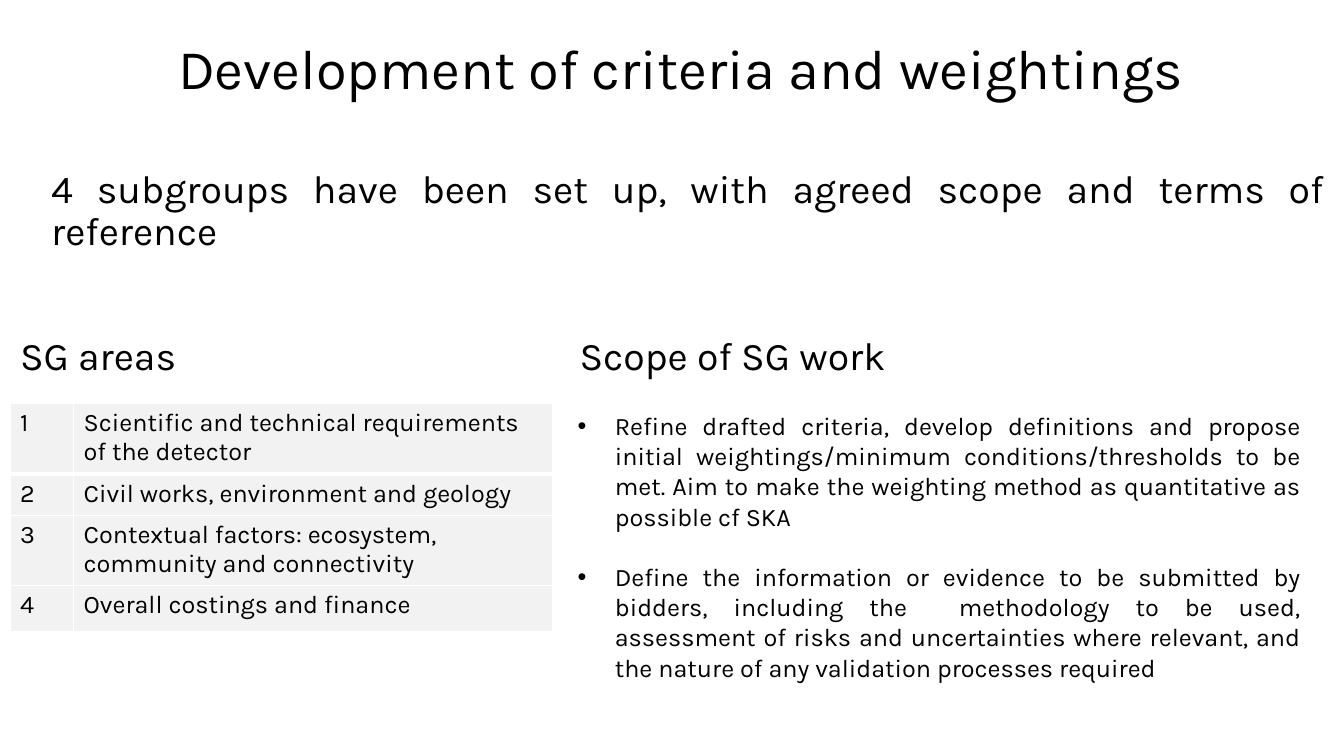
"""Build the slide on criteria and weightings."""
from lxml import etree
from pptx import Presentation
from pptx.dml.color import RGBColor
from pptx.enum.text import MSO_ANCHOR, PP_ALIGN
from pptx.oxml.ns import qn
from pptx.util import Inches, Pt

LEFT, MID, JUST = PP_ALIGN.LEFT, PP_ALIGN.CENTER, PP_ALIGN.JUSTIFY
CENTRE = MSO_ANCHOR.MIDDLE
FONT, INK, PALE, WHITE = "Karla", "000000", "F2F2F2", "FFFFFF"

TITLE = "Development of criteria and weightings"
INTRO = "4 subgroups have been set up, with agreed scope and terms of reference"
HEADS = [("SG areas", 0.1, 5.38), ("Scope of SG work", 5.65, 7.37)]
AREAS = [
    ("Scientific and technical requirements of the detector", 0.69),
    ("Civil works, environment and geology", 0.41),
    ("Contextual factors: ecosystem, community and connectivity", 0.7),
    ("Overall costings and finance", 0.46),
]
WIDTHS = [0.63, 4.75]
SCOPE = [
    "Refine drafted criteria, develop definitions and propose initial "
    "weightings/minimum conditions/thresholds to be met. Aim to make the "
    "weighting method as quantitative as possible cf SKA",
    "Define the information or evidence to be submitted by bidders, including "
    "the  methodology to be used, assessment of risks and uncertainties where "
    "relevant, and the nature of any validation processes required",
]


def hue(code):
    return RGBColor.from_string(code)


def style(para, size, align=LEFT):
    para.alignment = align
    font = para.font
    font.name, font.size, font.bold = FONT, Pt(size), False
    font.color.rgb = hue(INK)


def add_box(slide, texts, at, size, align=LEFT):
    box = slide.shapes.add_textbox(*map(Inches, at))
    frame = box.text_frame
    frame.word_wrap = True
    frame.text = "\n".join(texts)
    for para in frame.paragraphs:
        style(para, size, align)
    return frame


def add_dot(para):
    props = para._p.get_or_add_pPr()
    props.set("marL", str(Inches(0.37)))
    props.set("indent", str(-Inches(0.37)))
    face = etree.Element(qn("a:buFont"), typeface="Arial")
    dot = etree.Element(qn("a:buChar"), char="•")
    spot = 1 if props.find(qn("a:spcBef")) is not None else 0
    props[spot:spot] = [face, dot]


def edge(cell, low):
    props = cell._tc.get_or_add_tcPr()
    sides = [("lnL", 1), ("lnR", 1), ("lnT", 1), ("lnB", low)]
    for spot, (side, width) in enumerate(sides):
        line = etree.Element(qn("a:" + side), w=str(Pt(width)))
        fill = etree.SubElement(line, qn("a:solidFill"))
        etree.SubElement(fill, qn("a:srgbClr"), val=WHITE)
        props.insert(spot, line)


def add_areas(slide):
    high = sum(tall for _, tall in AREAS)
    at = map(Inches, (0.1, 4, sum(WIDTHS), high))
    table = slide.shapes.add_table(len(AREAS), len(WIDTHS), *at).table
    for col, width in zip(table.columns, WIDTHS):
        col.width = Inches(width)
    for row, (area, tall) in enumerate(AREAS):
        table.rows[row].height = Inches(tall)
        for col, text in enumerate((str(row + 1), area)):
            cell = table.cell(row, col)
            cell.text = text
            style(cell.text_frame.paragraphs[0], 18)
            cell.fill.solid()
            cell.fill.fore_color.rgb = hue(PALE)
            edge(cell, 3 if row == 0 else 1)


def main():
    deck = Presentation()
    deck.slide_width, deck.slide_height = Inches(13.33), Inches(7.5)
    slide = deck.slides.add_slide(deck.slide_layouts[5])

    title = slide.shapes.title
    title.left, title.top = Inches(0.34), Inches(0.31)
    title.width, title.height = Inches(12.82), Inches(0.8)
    title.text_frame.text = TITLE
    title.text_frame.vertical_anchor = CENTRE
    head = title.text_frame.paragraphs[0]
    style(head, 40, MID)
    head.line_spacing = 0.9

    intro = add_box(slide, [INTRO], (0.41, 1.63, 12.82, 1), 28, JUST)
    intro.paragraphs[0].line_spacing = 0.9

    for text, left, width in HEADS:
        add_box(slide, [text], (left, 3.24, width, 0.57), 28)

    add_areas(slide)
    scope = add_box(slide, SCOPE, (5.63, 4.02, 7.37, 2.82), 18, JUST)
    for spot, para in enumerate(scope.paragraphs):
        if spot:
            para.space_before = Pt(21.5)
        add_dot(para)

    deck.save("out.pptx")


if __name__ == "__main__":
    main()
